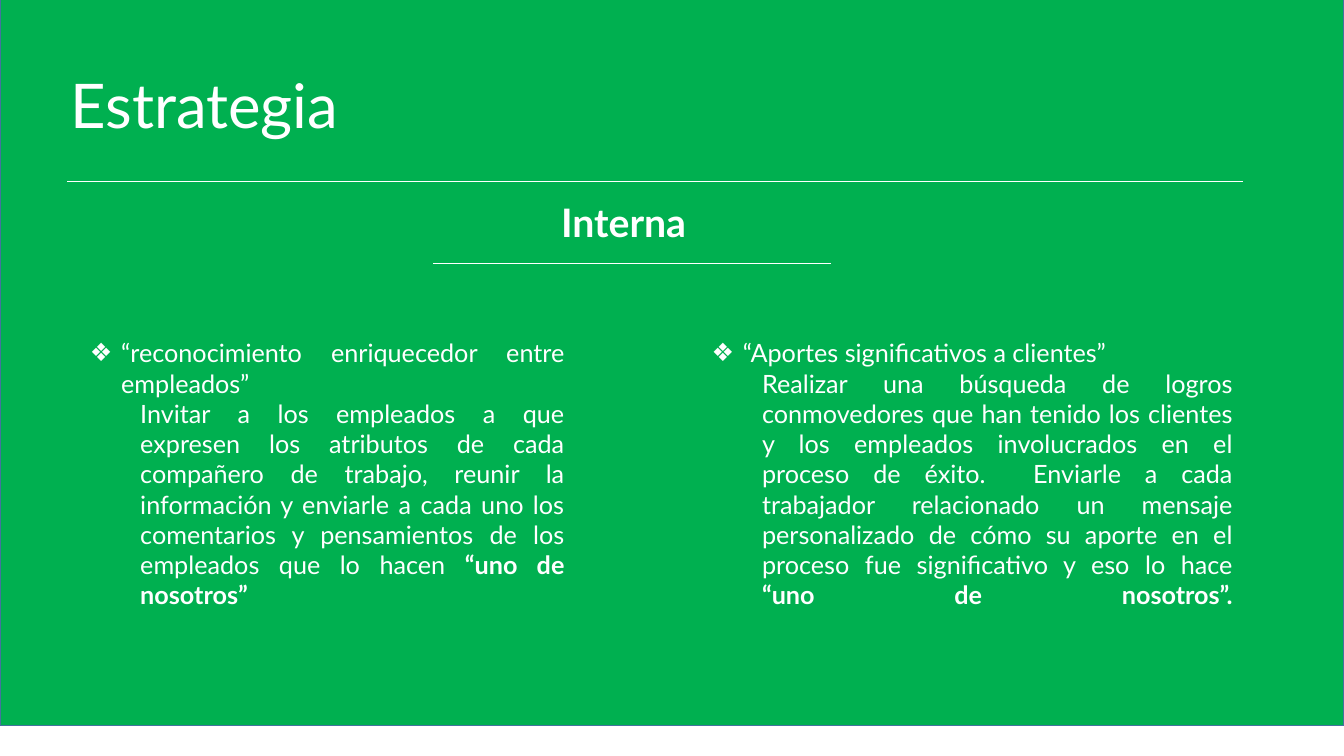
from lxml.etree import SubElement
from pptx import Presentation
from pptx.dml.color import RGBColor
from pptx.enum.shapes import MSO_CONNECTOR, MSO_SHAPE
from pptx.enum.text import MSO_ANCHOR, MSO_AUTO_SIZE, PP_ALIGN
from pptx.oxml.ns import qn
from pptx.util import Cm, Pt

WHITE = "FFFFFF"
GREEN = "00B050"
BLUE = "43739E"

STRATEGIES = [
    (2.01, 12.47, 7.95, "“reconocimiento enriquecedor entre empleados”",
     "Invitar a los empleados a que expresen los atributos de cada compañero de trabajo, "
     "reunir la información y enviarle a cada uno los comentarios y pensamientos de los "
     "empleados que lo hacen ",
     "“uno de nosotros”", False),
    (17.68, 13.64, 8.81, "“Aportes significativos a clientes”",
     "Realizar una búsqueda de logros conmovedores que han tenido los clientes y los "
     "empleados involucrados en el proceso de éxito.  Enviarle a cada trabajador relacionado "
     "un mensaje personalizado de cómo su aporte en el proceso fue significativo y eso lo hace ",
     "“uno de nosotros”.", True),
]


def color(value):
    return RGBColor.from_string(value)


def place(shape, left, top, width, height):
    shape.left, shape.top = Cm(left), Cm(top)
    shape.width, shape.height = Cm(width), Cm(height)


def add_span(paragraph, text, size, bold=False):
    span = paragraph.add_run()
    span.text = text
    span.font.name = "Lato"
    span.font.size = Pt(size)
    span.font.bold = bold
    span.font.color.rgb = color(WHITE)


def add_panel(page):
    panel = page.shapes.add_shape(MSO_SHAPE.RECTANGLE, 0, Cm(-0.76), Cm(33.87), Cm(19.05))
    panel.shadow.inherit = False
    panel.fill.solid()
    panel.fill.fore_color.rgb = color(GREEN)
    panel.line.color.rgb = color(BLUE)
    panel.line.width = Pt(1)
    page.shapes.title._element.addprevious(panel._element)


def add_rule(page, left, right, top):
    rule = page.shapes.add_connector(
        MSO_CONNECTOR.STRAIGHT, Cm(left), Cm(top), Cm(right), Cm(top))
    rule.line.color.rgb = color(WHITE)
    rule.line.width = Pt(0.5)
    SubElement(rule._element.spPr, qn("a:effectLst"))


def format_title(title):
    place(title, 1.52, 0.89, 7.72, 3.68)
    frame = title.text_frame
    frame.vertical_anchor = MSO_ANCHOR.MIDDLE
    frame.auto_size = MSO_AUTO_SIZE.NONE
    paragraph = frame.paragraphs[0]
    paragraph.alignment = PP_ALIGN.LEFT
    paragraph.line_spacing = 0.9
    add_span(paragraph, "Estrategia", 44)


def add_heading(page):
    box = page.shapes.add_textbox(Cm(13.89), Cm(4.88), Cm(9.04), Cm(1.45))
    box.text_frame.word_wrap = True
    add_span(box.text_frame.paragraphs[0], "Interna", 28, True)


def format_item(paragraph, margin, indent, bullet=None):
    paragraph.alignment = PP_ALIGN.JUSTIFY
    paragraph.line_spacing = 1.0
    paragraph.space_before = Pt(0)
    properties = paragraph._p.get_or_add_pPr()
    properties.set("marL", str(Cm(margin)))
    properties.set("indent", str(Cm(indent)))
    if bullet:
        SubElement(properties, qn("a:buChar"), char=bullet)
    else:
        SubElement(properties, qn("a:buNone"))


def fill_strategy(body, left, width, height, name, detail, closing, stretched):
    place(body, left, 8.38, width, height)
    frame = body.text_frame
    frame.auto_size = MSO_AUTO_SIZE.NONE
    heading = frame.paragraphs[0]
    format_item(heading, 0.79, -0.79, "❖")
    add_span(heading, name, 18)
    description = frame.add_paragraph()
    description.level = 1
    format_item(description, 1.27, 0)
    add_span(description, detail, 18)
    add_span(description, closing, 18, True)
    if stretched:
        description.add_line_break()


def main():
    deck = Presentation()
    deck.slide_width, deck.slide_height = Cm(33.87), Cm(19.05)
    page = deck.slides.add_slide(deck.slide_layouts.get_by_name("Two Content"))
    add_panel(page)
    format_title(page.shapes.title)
    add_heading(page)
    for index, strategy in enumerate(STRATEGIES, start=1):
        fill_strategy(page.placeholders[index], *strategy)
    add_rule(page, 1.7, 31.32, 4.57)
    add_rule(page, 10.92, 20.93, 6.63)
    deck.save("out.pptx")


if __name__ == "__main__":
    main()
